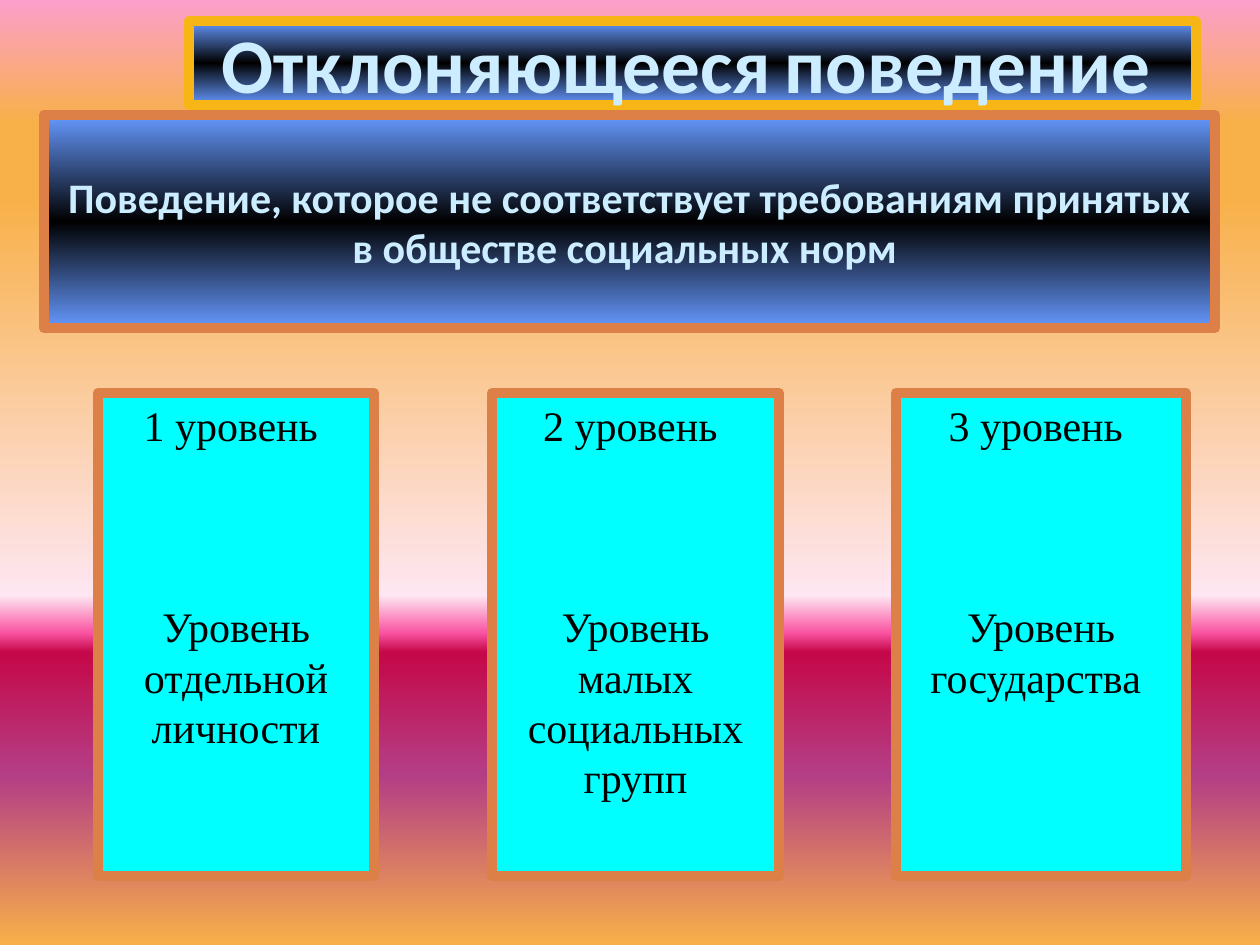
import pptx
import pptx.util
import pptx.dml.color
import pptx.enum.shapes
import pptx.enum.text
import pptx.oxml
import pptx.oxml.ns
from lxml import etree

RGBColor = pptx.dml.color.RGBColor
Pt = pptx.util.Pt
ALIGN = pptx.enum.text.PP_ALIGN
ANCHOR = pptx.enum.text.MSO_ANCHOR

# Content
TITLE = [("Отклоняющееся", 44.1), (" ", 32.4), ("поведение", 44.1), (" ", 32.4)]
DEFINITION = [("Поведение, которое не соответствует требованиям принятых "
               "в обществе социальных норм ", 24)]
LEVELS = [  # left px, width px, heading, description
    (98, 276, "1 уровень ", "Уровень отдельной личности"),
    (492, 287, "2 уровень ", "Уровень малых социальных групп"),
    (896, 290, "3 уровень ", "Уровень государства "),
]

# Look
PX = 914400 // 126
TITLE_BOX = (189, 21, 1007, 84)
DEFINITION_BOX = (44, 115, 1171, 213)
LEVEL_TOP, LEVEL_HEIGHT = 393, 483
BLACK = RGBColor(0x00, 0x00, 0x00)
CYAN = RGBColor(0x00, 0xFF, 0xFF)
PALE_BLUE = RGBColor(0xCC, 0xEC, 0xFF)
BLUE = RGBColor(0x66, 0x99, 0xFF)
GOLD = RGBColor(0xF7, 0xB6, 0x15)
COPPER = RGBColor(0xDD, 0x80, 0x47)
PINK = RGBColor(0xFC, 0x9F, 0xCB)
AMBER = RGBColor(0xF8, 0xB0, 0x49)
BLUSH = RGBColor(0xFE, 0xE7, 0xF2)
HOT_PINK = RGBColor(0xF9, 0x52, 0xA0)
CRIMSON = RGBColor(0xC5, 0x08, 0x49)
PURPLE = RGBColor(0xB4, 0x3E, 0x85)
SUNSET = [(0, PINK), (13, AMBER), (21, AMBER), (63, BLUSH), (67, HOT_PINK),
          (69, CRIMSON), (82, PURPLE), (100, AMBER)]
BLUE_BAND = [(0, BLUE), (50, BLACK), (100, BLUE)]
HEADING_FONT = {"name": "Calibri", "bold": True}
LEVEL_FONT = {"name": "Times New Roman", "size": Pt(24)}


def apply_gradient(fill, element, stops):
    """Fill from top to bottom with any number of colour stops."""
    fill.gradient()
    fill.gradient_angle = 270
    qn = pptx.oxml.ns.qn
    stop_list = element.find(".//" + qn("a:gsLst"))
    for old_stop in list(stop_list):
        stop_list.remove(old_stop)
    for percent, color in stops:
        stop = etree.SubElement(stop_list, qn("a:gs"), pos=str(percent * 1000))
        etree.SubElement(stop, qn("a:srgbClr"), val=str(color))


def place(box, bounds, border):
    box.left, box.top, box.width, box.height = (n * PX for n in bounds)
    box.line.color.rgb = border
    box.line.width = Pt(6)


def format_text(frame, anchor):
    frame.word_wrap = True
    frame.auto_size = pptx.enum.text.MSO_AUTO_SIZE.NONE
    frame.vertical_anchor = anchor


def add_run(paragraph, text, color, font):
    paragraph.alignment = ALIGN.CENTER
    run = paragraph.add_run()
    run.text = text
    run.font.color.rgb = color
    for name, value in font.items():
        setattr(run.font, name, value)


def fill_heading(heading, bounds, border, runs):
    place(heading, bounds, border)
    apply_gradient(heading.fill, heading.element, BLUE_BAND)
    format_text(heading.text_frame, ANCHOR.MIDDLE)
    paragraph = heading.text_frame.paragraphs[0]
    paragraph.space_before = Pt(0)
    for text, size in runs:
        add_run(paragraph, text, PALE_BLUE, {**HEADING_FONT, "size": Pt(size)})


def add_level(slide, left, width, heading, description):
    bounds = (left, LEVEL_TOP, width, LEVEL_HEIGHT)
    level = slide.shapes.add_shape(
        pptx.enum.shapes.MSO_SHAPE.RECTANGLE, *(n * PX for n in bounds))
    place(level, bounds, COPPER)
    level.shadow.inherit = False
    level.fill.solid()
    level.fill.fore_color.rgb = CYAN
    format_text(level.text_frame, ANCHOR.TOP)
    add_run(level.text_frame.paragraphs[0], heading, BLACK, LEVEL_FONT)
    detail = level.text_frame.add_paragraph()
    detail.space_before = Pt(86.4)
    add_run(detail, description, BLACK, LEVEL_FONT)


def main():
    deck = pptx.Presentation()
    deck.slide_width, deck.slide_height = 1260 * PX, 945 * PX
    slide = deck.slides.add_slide(deck.slide_layouts[0])

    # Background
    apply_gradient(slide.background.fill, slide.element, SUNSET)

    # Title and definition
    title, definition = slide.placeholders
    fill_heading(title, TITLE_BOX, GOLD, TITLE)
    fill_heading(definition, DEFINITION_BOX, COPPER, DEFINITION)

    # Three levels
    for level in LEVELS:
        add_level(slide, *level)

    deck.save("out.pptx")


if __name__ == "__main__":
    main()
